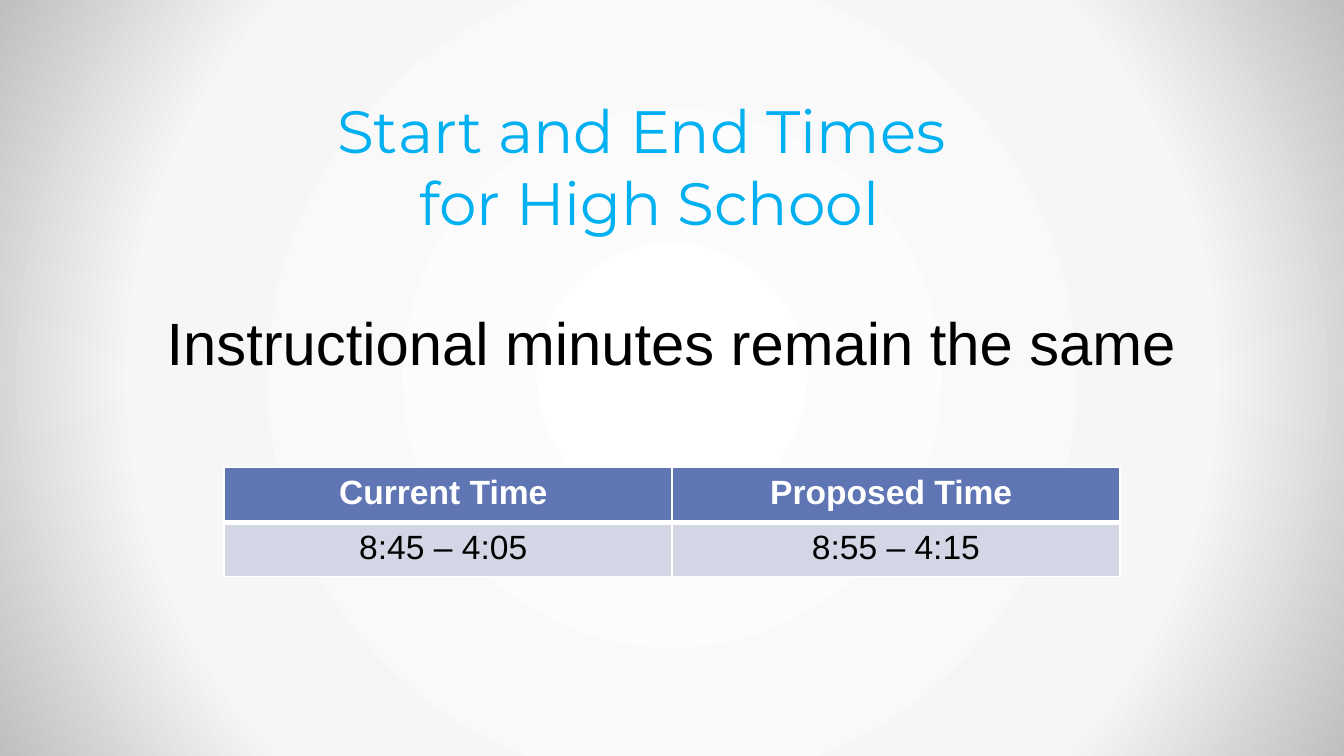
from dataclasses import dataclass

from pptx import Presentation
from pptx.dml.color import RGBColor
from pptx.enum.text import MSO_ANCHOR, PP_ALIGN
from pptx.oxml import parse_xml
from pptx.oxml.ns import nsdecls
from pptx.util import Pt


@dataclass(frozen=True)
class Theme:
    title: str = "00B0F0"
    text: str = "000000"
    light: str = "FFFFFF"
    header: str = "6076B4"
    row: str = "D2D6E5"
    backdrop: tuple = ((0, "FFFFFF"), (70, "F6F6F6"), (100, "BFBFBF"))
    title_font: str = "Montserrat"
    body_font: str = "Arial"
    large: int = 32
    small: int = 18


THEME = Theme()
TIMES = [("Current Time ", "Proposed Time "),
         ("8:45 – 4:05 ", "8:55 – 4:15")]


def paint_background(page):
    """Fill the page with a gradient that darkens outward from its centre."""
    stops = "".join(
        f'<a:gs pos="{percent * 1000}"><a:srgbClr val="{color}"/></a:gs>'
        for percent, color in THEME.backdrop)
    page.element.cSld.insert(0, parse_xml(
        f'<p:bg {nsdecls("p", "a")}><p:bgPr><a:gradFill rotWithShape="1">'
        f'<a:gsLst>{stops}</a:gsLst><a:path path="circle">'
        '<a:fillToRect l="50000" t="50000" r="50000" b="50000"/></a:path>'
        '</a:gradFill><a:effectLst/></p:bgPr></p:bg>'))


def write_centered(frame, text, font, size, color, bold=False):
    para = frame.paragraphs[0]
    para.text = text
    para.alignment = PP_ALIGN.CENTER
    for span in para.runs:
        span.font.name = font
        span.font.size = Pt(size)
        span.font.bold = bold
        span.font.color.rgb = RGBColor.from_string(color)
    return para


def add_text_frame(page, box):
    frame = page.shapes.add_textbox(*map(Pt, box)).text_frame
    frame.word_wrap = True
    frame.vertical_anchor = MSO_ANCHOR.TOP
    return frame


def add_title(page, box):
    frame = add_text_frame(page, box)
    frame.margin_top = Pt(16)
    write_centered(frame, "Start and End Times \vfor High School",
                   THEME.title_font, THEME.large, THEME.title)


def add_statement(page, box):
    para = write_centered(add_text_frame(page, box),
                          "Instructional minutes remain the same",
                          THEME.body_font, THEME.large, THEME.text)
    para.space_before = Pt(6.4)


def outline_cell(cell, widths):
    """Draw the cell's borders, given as a width in points for each side."""
    properties = cell._tc.get_or_add_tcPr()
    for index, (side, width) in enumerate(widths.items()):
        properties.insert(index, parse_xml(
            f'<a:ln{side} {nsdecls("a")} w="{Pt(width)}"><a:solidFill>'
            f'<a:srgbClr val="{THEME.light}"/></a:solidFill></a:ln{side}>'))


def add_times_table(page, box):
    table = page.shapes.add_table(
        len(TIMES), len(TIMES[0]), *map(Pt, box)).table
    for row, labels in enumerate(TIMES):
        is_header = row == 0
        fill, color = ((THEME.header, THEME.light) if is_header
                       else (THEME.row, THEME.text))
        # The thick rule between the rows belongs to both of them.
        top, bottom = (1, 3) if is_header else (3, 1)
        for column, label in enumerate(labels):
            cell = table.cell(row, column)
            cell.fill.solid()
            cell.fill.fore_color.rgb = RGBColor.from_string(fill)
            write_centered(cell.text_frame, label, THEME.body_font,
                           THEME.small, color, bold=is_header)
            outline_cell(cell, {"L": 1, "R": 1, "T": top, "B": bottom})


def main():
    deck = Presentation()
    deck.slide_width, deck.slide_height = Pt(720), Pt(405)
    page = deck.slides.add_slide(deck.slide_layouts[6])
    paint_background(page)
    add_title(page, (24, 34.5, 648, 68))
    add_statement(page, (36, 160.5, 648, 267))
    add_times_table(page, (120, 250.5, 480, 58.4))
    deck.save("out.pptx")


if __name__ == "__main__":
    main()
